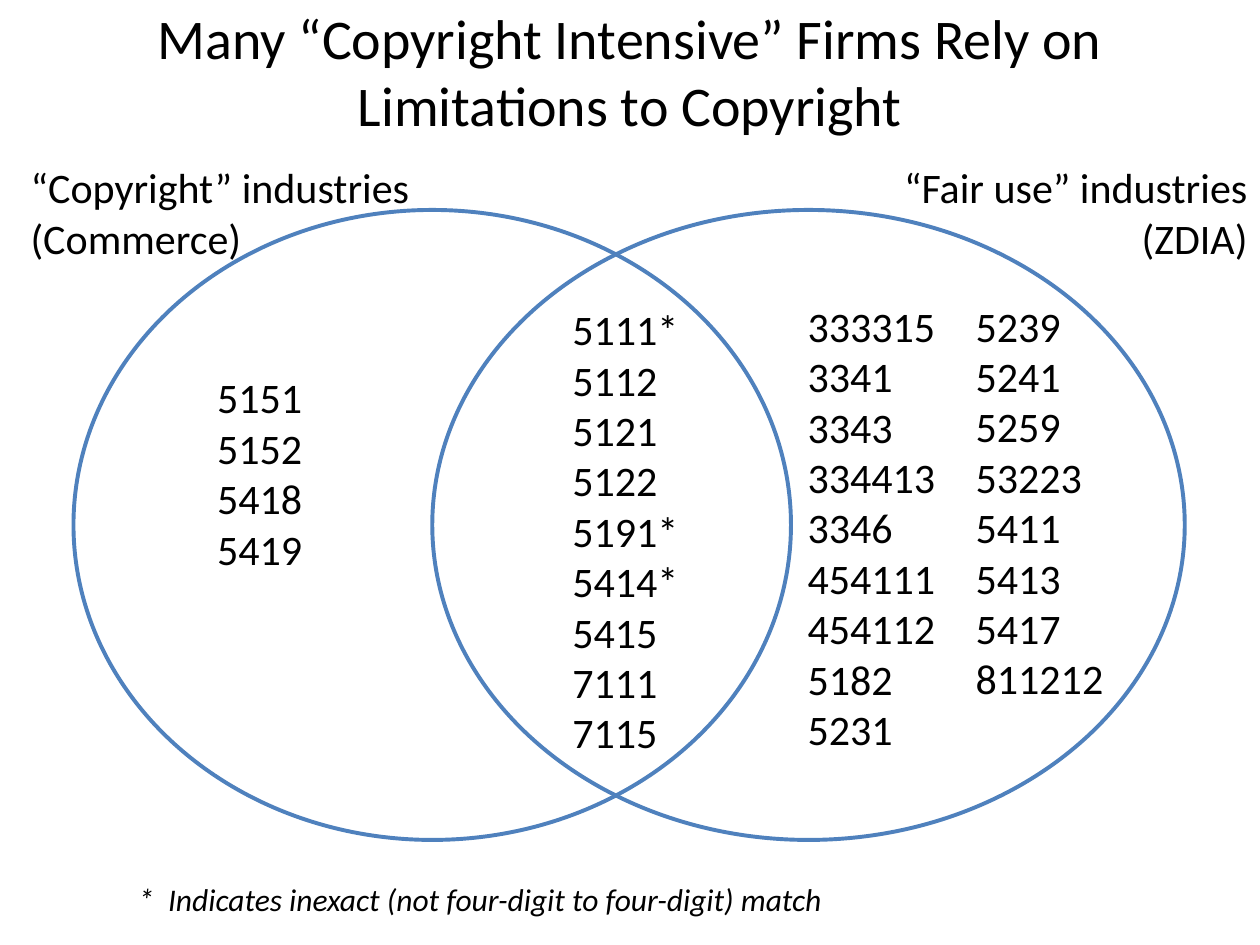
from dataclasses import dataclass

from pptx import Presentation
from pptx.dml.color import RGBColor
from pptx.enum.shapes import MSO_SHAPE as Shape
from pptx.enum.text import MSO_ANCHOR as Anchor, MSO_AUTO_SIZE as AutoSize, PP_ALIGN as Align
from pptx.slide import Slide
from pptx.text.text import TextFrame
from pptx.util import Pt

COLORS = {"text": "000000", "circle": "4F81BD"}
FONT = "Calibri"


@dataclass(frozen=True)
class Box:
    left: float
    top: float
    width: float
    height: float

    def lengths(self) -> tuple[Pt, ...]:
        return tuple(Pt(n) for n in (self.left, self.top, self.width, self.height))


@dataclass(frozen=True)
class Label:
    box: Box
    lines: tuple[str, ...]
    align: Align = Align.LEFT
    size: float = 24
    italic: bool = False


CIRCLES = (Box(42, 120, 410, 360), Box(247, 120, 430, 360))

COPYRIGHT_HEADING = Label(Box(10.4, 88.8, 318, 65.5), ("“Copyright” industries", "(Commerce)"))
FAIR_USE_HEADING = Label(
    Box(454, 88.8, 266, 65.5), ("“Fair use” industries", "(ZDIA)"), Align.RIGHT
)
COPYRIGHT_CODES = Label(Box(117, 209, 102, 124), ("5151", "5152", "5418", "5419"))
SHARED_CODES = Label(
    Box(320, 170, 102, 269),
    ("5111*", "5112", "5121", "5122", "5191*", "5414*", "5415", "7111", "7115"),
)
FAIR_USE_CODES = (
    Label(
        Box(454.4, 168, 96, 298),
        ("333315", "3341", "3343", "334413", "3346", "454111", "454112", "5182", "5231"),
    ),
    Label(
        Box(550.5, 168, 97, 269),
        ("5239", "5241", "5259", "53223", "5411", "5413", "5417", "811212"),
    ),
)
FOOTNOTE = Label(
    Box(72, 499.6, 576, 30),
    ("*\tIndicates inexact (not four-digit to four-digit) match",),
    size=18,
    italic=True,
)


def write_lines(frame: TextFrame, label: Label) -> None:
    frame.word_wrap = True
    frame.text = "\n".join(label.lines)
    for paragraph in frame.paragraphs:
        paragraph.alignment = label.align
        font = paragraph.font
        font.name = FONT
        font.size = Pt(label.size)
        font.italic = label.italic
        font.color.rgb = RGBColor.from_string(COLORS["text"])


def add_label(slide: Slide, label: Label) -> TextFrame:
    frame = slide.shapes.add_textbox(*label.box.lengths()).text_frame
    write_lines(frame, label)
    frame.auto_size = AutoSize.SHAPE_TO_FIT_TEXT
    return frame


def add_circle(slide: Slide, box: Box) -> None:
    circle = slide.shapes.add_shape(Shape.OVAL, *box.lengths())
    circle.shadow.inherit = False
    circle.fill.background()
    circle.line.color.rgb = RGBColor.from_string(COLORS["circle"])
    circle.line.width = Pt(2.25)


def set_title(slide: Slide, label: Label) -> None:
    title = slide.shapes.title
    title.left, title.top, title.width, title.height = label.box.lengths()
    write_lines(title.text_frame, label)
    title.text_frame.auto_size = AutoSize.NONE
    title.text_frame.vertical_anchor = Anchor.MIDDLE


def hang_indent(frame: TextFrame, indent: float) -> None:
    for paragraph in frame.paragraphs:
        properties = paragraph._p.get_or_add_pPr()
        properties.set("marL", str(Pt(indent)))
        properties.set("indent", str(-Pt(indent)))


def main() -> None:
    deck = Presentation()
    deck.slide_width, deck.slide_height = Pt(720), Pt(540)
    slide = deck.slides.add_slide(deck.slide_layouts[5])
    set_title(
        slide,
        Label(
            Box(12, 12, 696, 57),
            ("Many “Copyright Intensive” Firms Rely on Limitations to Copyright",),
            Align.CENTER,
            32,
        ),
    )
    for codes in (COPYRIGHT_CODES, *FAIR_USE_CODES):
        add_label(slide, codes)
    for circle in CIRCLES:
        add_circle(slide, circle)
    for label in (SHARED_CODES, COPYRIGHT_HEADING, FAIR_USE_HEADING):
        add_label(slide, label)
    hang_indent(add_label(slide, FOOTNOTE), 17)
    deck.save("out.pptx")


if __name__ == "__main__":
    main()
